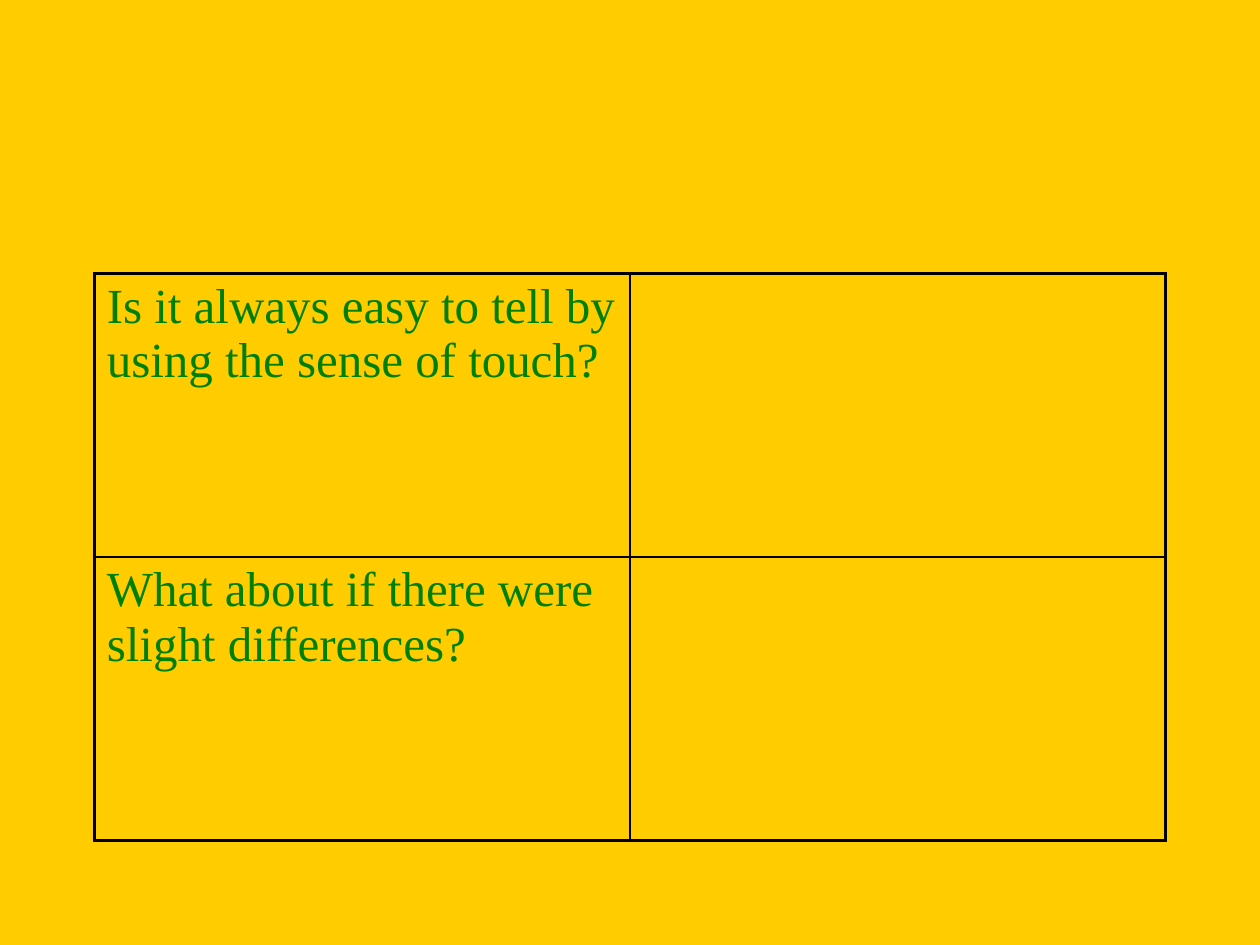
from lxml import etree
from pptx import Presentation
from pptx.dml.color import RGBColor
from pptx.oxml.ns import qn
from pptx.util import Cm, Pt

YELLOW = RGBColor(0xFF, 0xCC, 0x00)
GREEN = RGBColor(0x00, 0x80, 0x00)
BLACK = RGBColor(0x00, 0x00, 0x00)
FONT = "Times New Roman"
OUTER, INNER = Pt(2.25), Pt(1)
QUESTIONS = [
    "Is it always easy to tell by using the sense of touch?",
    "What about if there were slight differences?",
]


def write_text(frame, text, size=28, color=GREEN):
    span = frame.paragraphs[0].add_run()
    span.text = text
    span.font.name = FONT
    span.font.size = Pt(size)
    span.font.color.rgb = color


def set_borders(cell, widths):
    properties = cell._tc.get_or_add_tcPr()
    for index, (side, width) in enumerate(widths.items()):
        line = etree.Element(qn(f"a:ln{side}"), w=str(width))
        fill = etree.SubElement(line, qn("a:solidFill"))
        etree.SubElement(fill, qn("a:srgbClr"), val=str(BLACK))
        properties.insert(index, line)


def add_question_table(page, questions):
    rows, columns = len(questions), 2
    table = page.shapes.add_table(
        rows, columns, Cm(1.9), Cm(5.51), Cm(21.6), Cm(11.43)
    ).table
    table.first_row = False
    table.horz_banding = False
    for row, question in enumerate(questions):
        for column in range(columns):
            cell = table.cell(row, column)
            cell.fill.background()
            set_borders(cell, {
                "L": OUTER if column == 0 else INNER,
                "R": OUTER if column == columns - 1 else INNER,
                "T": OUTER if row == 0 else INNER,
                "B": OUTER if row == rows - 1 else INNER,
            })
        write_text(table.cell(row, 0).text_frame, question)


def main():
    deck = Presentation()
    deck.slide_width, deck.slide_height = Cm(25.4), Cm(19.05)
    page = deck.slides.add_slide(deck.slide_layouts[6])
    page.background.fill.solid()
    page.background.fill.fore_color.rgb = YELLOW
    add_question_table(page, QUESTIONS)
    deck.save("out.pptx")


if __name__ == "__main__":
    main()
